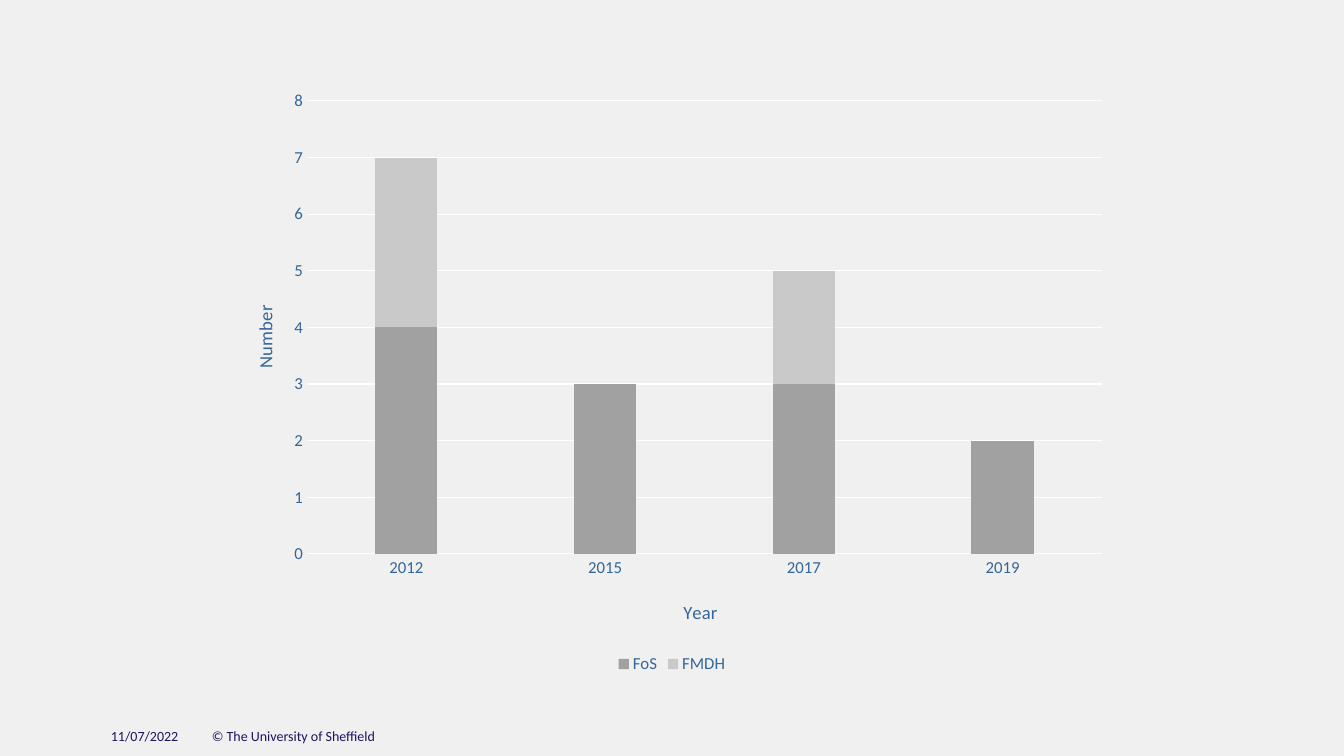
import pptx
import pptx.chart.data
import pptx.dml.color
import pptx.enum.chart
import pptx.enum.text
import pptx.oxml
import pptx.oxml.ns
import pptx.util

PX = 914400 / 100.8
SLIDE_SIZE = (1344, 756)
FONT = "Calibri"
COLORS = {
    "background": "F0F0F0",
    "footer": "1F145D",
    "label": "336699",
    "line": "FFFFFF",
    "FoS": "A1A1A1",
    "FMDH": "C9C9C9",
}
YEARS = ["2012", "2015", "2017", "2019"]
COUNTS = {"FoS": [4, 3, 3, 2], "FMDH": [3, 0, 2, 0]}


def px(length):
    return pptx.util.Emu(round(length * PX))


def color(name):
    return pptx.dml.color.RGBColor.from_string(COLORS[name])


def set_font(font, size, name):
    font.name = FONT
    font.size = pptx.util.Pt(size)
    font.bold = False
    font.color.rgb = color(name)


def write_text(frame, text, size=12, name="label"):
    paragraph = frame.paragraphs[0]
    run = paragraph.add_run()
    run.text = text
    set_font(run.font, size, name)


def set_layout(element, index, target=None, **fractions):
    for layout in element.findall(pptx.oxml.ns.qn("c:layout")):
        element.remove(layout)
    parts = [("layoutTarget", target)] if target else []
    parts += [("xMode", "edge"), ("yMode", "edge")]
    parts += [(key, round(value, 4)) for key, value in fractions.items()]
    inner = "".join(f'<c:{tag} val="{value}"/>' for tag, value in parts)
    namespace = pptx.oxml.ns.nsdecls("c")
    xml = f"<c:layout {namespace}><c:manualLayout>{inner}</c:manualLayout></c:layout>"
    element.insert(index, pptx.oxml.parse_xml(xml))


def style_axis(axis, title, x, y):
    axis.major_tick_mark = pptx.enum.chart.XL_TICK_MARK.NONE
    axis.minor_tick_mark = pptx.enum.chart.XL_TICK_MARK.NONE
    set_font(axis.tick_labels.font, 12, "label")
    write_text(axis.axis_title.text_frame, title, size=13.3)
    set_layout(axis.axis_title._element, 1, x=x, y=y)


def style_line(line):
    line.color.rgb = color("line")
    line.width = pptx.util.Pt(0.75)


def add_footer(slide, left, top, width, height):
    texts = [("11/07/2022", 0, 134), ("© The University of Sheffield", 101, width - 101)]
    for text, offset, box_width in texts:
        shape = slide.shapes.add_textbox(px(left + offset), px(top), px(box_width), px(height))
        shape.text_frame.word_wrap = True
        shape.text_frame.vertical_anchor = pptx.enum.text.MSO_ANCHOR.TOP
        write_text(shape.text_frame, text, size=10, name="footer")


def add_count_chart(slide, left, top, width, height):
    data = pptx.chart.data.CategoryChartData()
    data.categories = YEARS
    for name, values in COUNTS.items():
        data.add_series(name, values)
    chart = slide.shapes.add_chart(
        pptx.enum.chart.XL_CHART_TYPE.COLUMN_STACKED,
        px(left), px(top), px(width), px(height), data,
    ).chart
    set_font(chart.font, 10, "label")
    chart.has_title = False

    plot = chart.plots[0]
    plot.gap_width = 219
    plot.overlap = 100
    plot.vary_by_categories = False
    for series in plot.series:
        series.format.fill.solid()
        series.format.fill.fore_color.rgb = color(series.name)

    style_axis(chart.category_axis, "Year", 456 / width, 516 / height)
    style_line(chart.category_axis.format.line)
    value_axis = chart.value_axis
    style_axis(value_axis, "Number", 25 / width, 222 / height)
    value_axis.minimum_scale = 0
    value_axis.maximum_scale = 8
    value_axis.major_unit = 1
    value_axis.format.line.fill.background()
    style_line(value_axis.major_gridlines.format.line)

    chart.has_legend = True
    chart.legend.position = pptx.enum.chart.XL_LEGEND_POSITION.BOTTOM
    chart.legend.include_in_layout = False
    set_font(chart.legend.font, 12, "label")
    set_layout(
        chart._chartSpace.chart.plotArea, 0, target="inner",
        x=83 / width, y=21 / height, w=795 / width, h=453 / height,
    )


def main():
    presentation = pptx.Presentation()
    presentation.slide_width, presentation.slide_height = map(px, SLIDE_SIZE)
    slide = presentation.slides.add_slide(presentation.slide_layouts[6])
    slide.background.fill.solid()
    slide.background.fill.fore_color.rgb = color("background")
    add_footer(slide, 101, 723, 863, 33)
    add_count_chart(slide, 224, 80, 896, 598)
    presentation.save("out.pptx")


if __name__ == "__main__":
    main()
